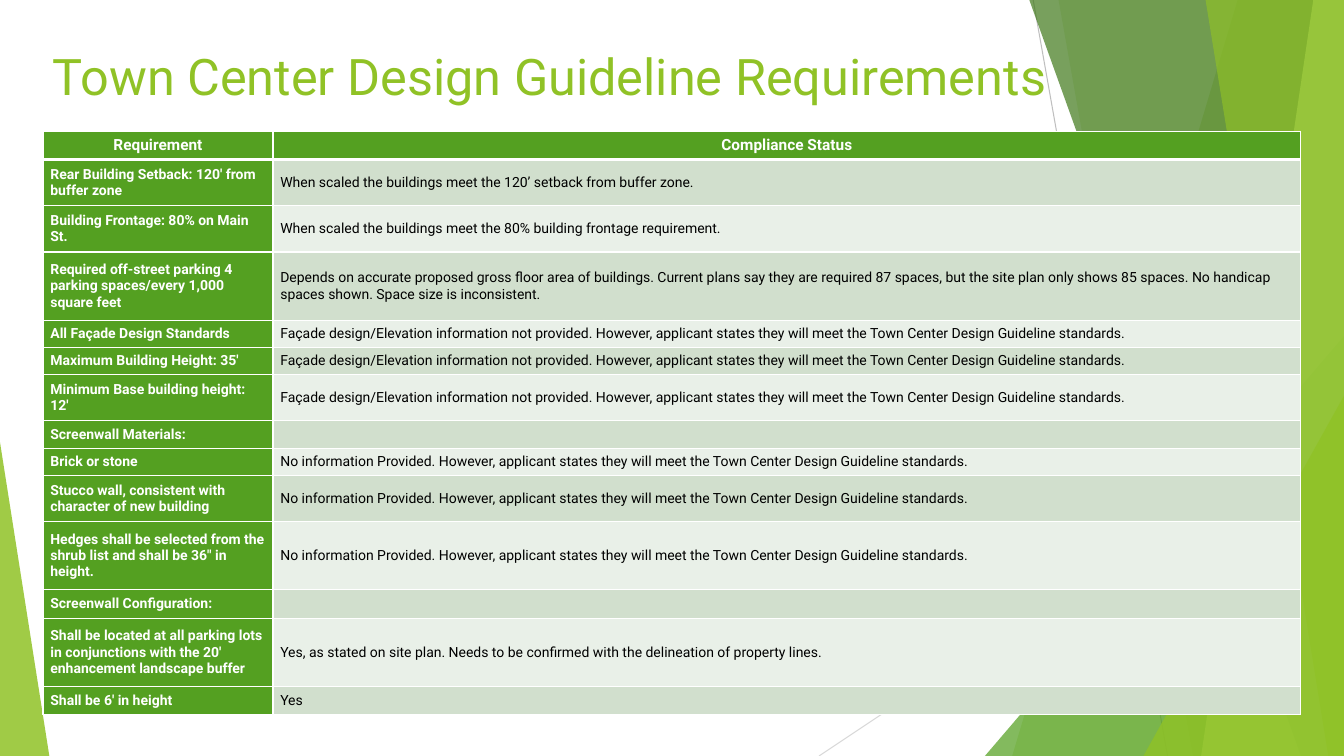
import pptx
import pptx.util
import pptx.dml.color
import pptx.enum.shapes
import pptx.enum.text
import pptx.oxml.ns
from lxml import etree

PX = 9525
FONT = "Roboto"
RGB = pptx.dml.color.RGBColor
WHITE = RGB(0xFF, 0xFF, 0xFF)
BLACK = RGB(0x00, 0x00, 0x00)
LIME = RGB(0x90, 0xC2, 0x26)
PALE_LIME = RGB(0xC0, 0xE4, 0x74)
GREEN = RGB(0x54, 0xA0, 0x21)
DARK_GREEN = RGB(0x3F, 0x78, 0x19)
BAND_DARK = RGB(0xD1, 0xDF, 0xCD)
BAND_LIGHT = RGB(0xE9, 0xF0, 0xE8)
GREY = RGB(0xBF, 0xBF, 0xBF)
LIGHT_GREY = RGB(0xD9, 0xD9, 0xD9)
qn = pptx.oxml.ns.qn


def paint(sp, color, opacity):
    sp.shadow.inherit = False
    sp.line.fill.background()
    sp.fill.solid()
    sp.fill.fore_color.rgb = color
    clr = sp._element.spPr.find(".//" + qn("a:srgbClr"))
    etree.SubElement(clr, qn("a:alpha"), val=str(opacity * 1000))


def add_border(cell, side, width):
    ln = etree.SubElement(cell._tc.get_or_add_tcPr(), qn("a:" + side), w=str(width * 12700))
    fill = etree.SubElement(ln, qn("a:solidFill"))
    etree.SubElement(fill, qn("a:srgbClr"), val=str(WHITE))


prs = pptx.Presentation()
prs.slide_width = 1280 * PX
prs.slide_height = 720 * PX
s = prs.slides.add_slide(prs.slide_layouts[6])

for x1, y1, x2, y2, color in [(984, 0, 1112, 720, GREY), (1280, 387, 780, 720, LIGHT_GREY)]:
    cx = s.shapes.add_connector(
        pptx.enum.shapes.MSO_CONNECTOR.STRAIGHT, x1 * PX, y1 * PX, x2 * PX, y2 * PX)
    cx.line.color.rgb = color
    cx.line.width = pptx.util.Pt(0.75)
    etree.SubElement(cx._element.spPr, qn("a:effectLst"))

facets = [
    ("band", (1179, 964), LIME, 30),
    ("band", (1008, 1136), LIME, 20),
    ("triangle", (938, 320, 342, 400, 1), GREEN, 72),
    ("band", (980, 1239), DARK_GREEN, 70),
    ("band", (1251, 1144), PALE_LIME, 70),
    ("band", (1148, 1265), LIME, 65),
    ("triangle", (1089, 377, 191, 343, 1), LIME, 80),
    ("triangle", (0, 421, 47, 299, 0), LIME, 85),
]
for kind, geometry, color, opacity in facets:
    if kind == "band":
        top_x, bottom_x = geometry
        fb = s.shapes.build_freeform(top_x, -1, scale=PX)
        fb.add_line_segments([(1280, -1), (1280, 720), (bottom_x, 720)])
        sp = fb.convert_to_shape()
    else:
        x, y, w, h, apex = geometry
        sp = s.shapes.add_shape(
            pptx.enum.shapes.MSO_SHAPE.ISOSCELES_TRIANGLE, x * PX, y * PX, w * PX, h * PX)
        sp.adjustments[0] = apex
    paint(sp, color, opacity)

tf = s.shapes.add_textbox(41 * PX, 38 * PX, 1151 * PX, 87 * PX).text_frame
tf.word_wrap = True
tf.text = "Town Center Design Guideline Requirements"
font = tf.paragraphs[0].runs[0].font
font.name = FONT
font.size = pptx.util.Pt(36)
font.color.rgb = LIME

FACADE = ("Façade design/Elevation information not provided. However, applicant states "
          "they will meet the Town Center Design Guideline standards.")
NO_INFO = ("No information Provided. However, applicant states "
           "they will meet the Town Center Design Guideline standards.")
rows = [
    (27, "Requirement", "Compliance Status"),
    (44, "Rear Building Setback: 120' from buffer zone",
     "When scaled the buildings meet the 120’ setback from buffer zone."),
    (44, "Building Frontage: 80% on Main St.",
     "When scaled the buildings meet the 80% building frontage requirement."),
    (65, "Required off-street parking 4 parking spaces/every 1,000 square feet",
     "Depends on accurate proposed gross floor area of buildings. Current plans say they are "
     "required 87 spaces, but the site plan only shows 85 spaces. No handicap spaces shown. "
     "Space size is inconsistent."),
    (26, "All Façade Design Standards", FACADE),
    (26, "Maximum Building Height: 35'", FACADE),
    (44, "Minimum Base building height: 12'", FACADE),
    (26, "Screenwall Materials:", ""),
    (26, "Brick or stone", NO_INFO),
    (44, "Stucco wall, consistent with character of new building", NO_INFO),
    (65, "Hedges shall be selected from the shrub list and shall be 36\" in height.", NO_INFO),
    (27, "Screenwall Configuration:", ""),
    (65, "Shall be located at all parking lots in conjunctions with the 20' enhancement "
     "landscape buffer",
     "Yes, as stated on site plan. Needs to be confirmed with the delineation of property lines."),
    (27, "Shall be 6' in height", "Yes"),
]
table_height = sum(height for height, *_ in rows)
table = s.shapes.add_table(len(rows), 2, 41 * PX, 125 * PX, 1198 * PX, table_height * PX).table
table.columns[0].width = 219 * PX
table.columns[1].width = 979 * PX

for i, (height, *texts) in enumerate(rows):
    table.rows[i].height = height * PX
    for j, text in enumerate(texts):
        cell = table.cell(i, j)
        header = i == 0
        strong = header or j == 0
        cell.margin_left = cell.margin_right = 7 * PX
        cell.margin_top = cell.margin_bottom = 0
        cell.vertical_anchor = pptx.enum.text.MSO_ANCHOR.MIDDLE
        for side in ("lnL", "lnR", "lnT", "lnB"):
            thick = (i, side) in [(0, "lnB"), (1, "lnT")]
            add_border(cell, side, 3 if thick else 1)
        cell.fill.solid()
        cell.fill.fore_color.rgb = GREEN if strong else BAND_DARK if i % 2 else BAND_LIGHT
        p = cell.text_frame.paragraphs[0]
        p.text = text
        if header:
            p.alignment = pptx.enum.text.PP_ALIGN.CENTER
        if not text:
            etree.SubElement(p._p, qn("a:endParaRPr"), sz="1000")
        for r in p.runs:
            r.font.name = FONT
            r.font.size = pptx.util.Pt(11 if header else 10)
            r.font.bold = strong
            r.font.color.rgb = WHITE if strong else BLACK

prs.save("out.pptx")
